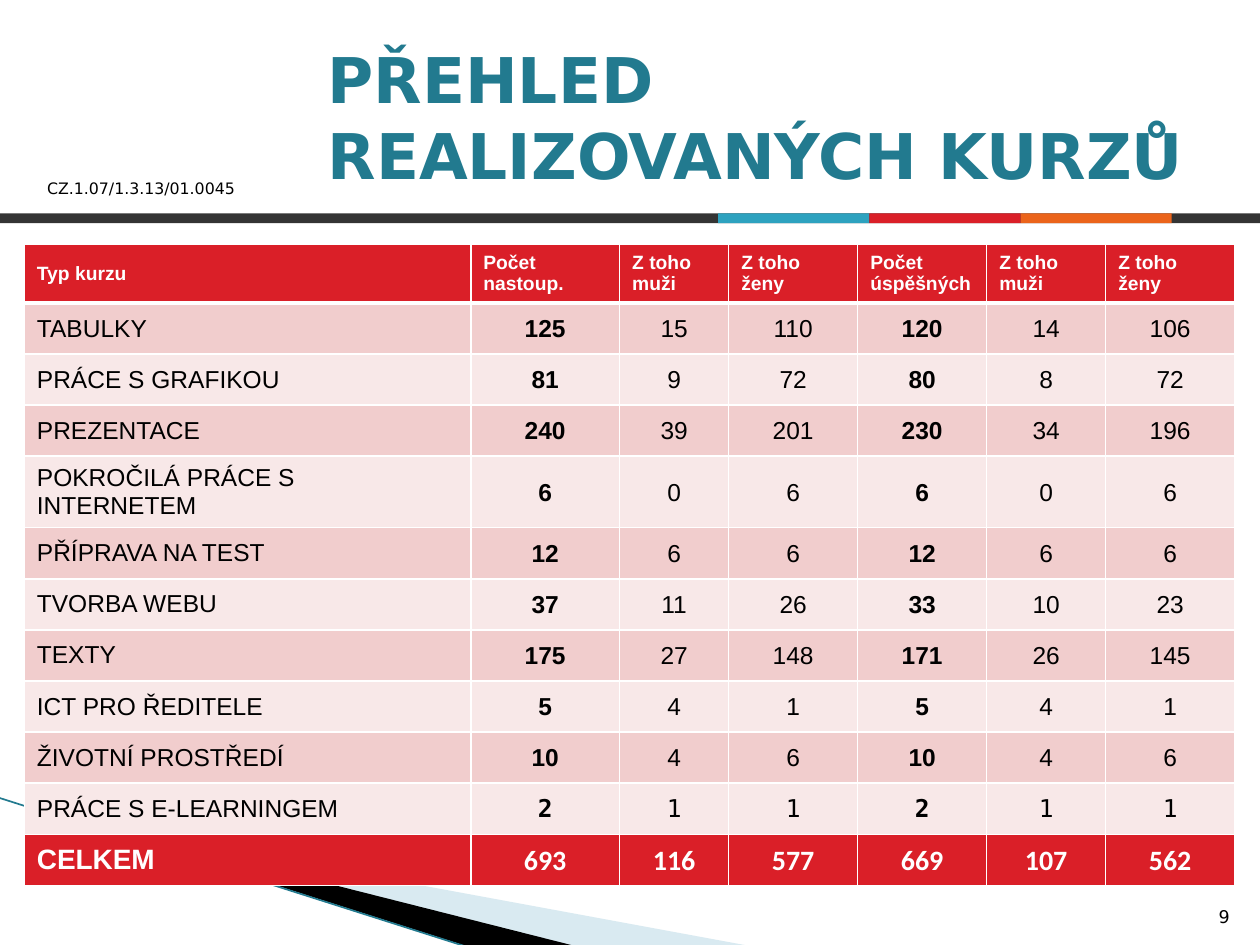
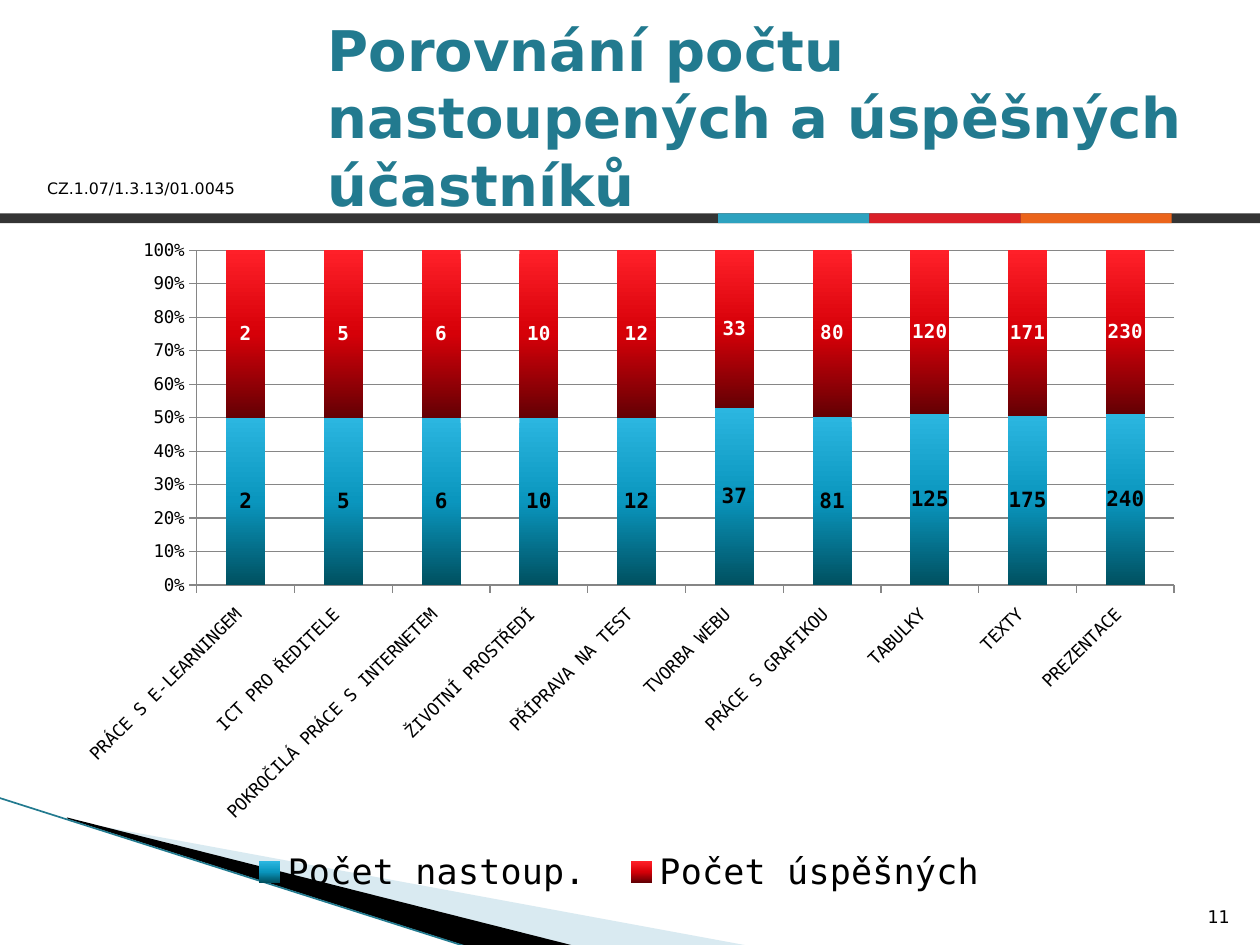
from lxml import etree
from pptx import Presentation
from pptx.chart.data import CategoryChartData
from pptx.dml.color import RGBColor
from pptx.enum.chart import XL_CHART_TYPE, XL_LABEL_POSITION, XL_LEGEND_POSITION, XL_TICK_MARK
from pptx.enum.shapes import MSO_CONNECTOR, MSO_SHAPE
from pptx.enum.text import MSO_ANCHOR, MSO_AUTO_SIZE, PP_ALIGN
from pptx.oxml.ns import qn
from pptx.util import Cm, Pt

LEFT, CENTER, RIGHT = PP_ALIGN.LEFT, PP_ALIGN.CENTER, PP_ALIGN.RIGHT
TOP, MIDDLE, BOTTOM = MSO_ANCHOR.TOP, MSO_ANCHOR.MIDDLE, MSO_ANCHOR.BOTTOM
TITLE_ONLY_LAYOUT = 5

COLORS = {
    "white": "FFFFFF", "black": "000000", "title": "227A8F", "band": "343434",
    "blue": "2DA2BF", "red": "DA1F28", "orange": "EB641B", "swoosh": "A0CBDC",
    "row_dark": "F1CDCD", "row_light": "F8E8E8", "grid": "868686",
}
GRADIENTS = {
    "started": ["2BB6E0", "0A96BE", "005060"],
    "passed": ["FF2029", "D60008", "640004"],
}
SANS, MONO, ARIAL, CALIBRI = "DejaVu Sans", "DejaVu Sans Mono", "Arial", "Calibri"

PROJECT_CODE = "CZ.1.07/1.3.13/01.0045"
STARTED, PASSED = "Počet nastoup.", "Počet úspěšných"
HEADERS = ["Typ kurzu", STARTED, "Z toho muži", "Z toho ženy",
           PASSED, "Z toho muži", "Z toho ženy"]
# Course: started, men, women, passed, men, women
COURSES = {
    "TABULKY": [125, 15, 110, 120, 14, 106],
    "PRÁCE S GRAFIKOU": [81, 9, 72, 80, 8, 72],
    "PREZENTACE": [240, 39, 201, 230, 34, 196],
    "POKROČILÁ PRÁCE S INTERNETEM": [6, 0, 6, 6, 0, 6],
    "PŘÍPRAVA NA TEST": [12, 6, 6, 12, 6, 6],
    "TVORBA WEBU": [37, 11, 26, 33, 10, 23],
    "TEXTY": [175, 27, 148, 171, 26, 145],
    "ICT PRO ŘEDITELE": [5, 4, 1, 5, 4, 1],
    "ŽIVOTNÍ PROSTŘEDÍ": [10, 4, 6, 10, 4, 6],
    "PRÁCE S E-LEARNINGEM": [2, 1, 1, 2, 1, 1],
}
COLUMN_WIDTHS = [9, 3, 2.2, 2.6, 2.6, 2.4, 2.6]
BOLD_COLUMNS = (1, 4)


def rgb(name):
    return RGBColor.from_string(COLORS[name])


def format_font(font, size, name=SANS, color="black", bold=False):
    font.size, font.name, font.bold = Pt(size), name, bold
    font.color.rgb = rgb(color)


def write_text(frame, text, align=LEFT, anchor=TOP, **font_format):
    frame.word_wrap = True
    frame.vertical_anchor = anchor
    paragraph = frame.paragraphs[0]
    paragraph.alignment = align
    run = paragraph.add_run()
    run.text = text
    format_font(run.font, **font_format)


def add_text_box(slide, box, text, **text_format):
    shape = slide.shapes.add_textbox(*map(Cm, box))
    write_text(shape.text_frame, text, **text_format)


def paint(shape, color):
    shape.shadow.inherit = False
    shape.fill.solid()
    shape.fill.fore_color.rgb = rgb(color)
    shape.line.fill.background()


def add_polygon(slide, points, color):
    points = [(Cm(x), Cm(y)) for x, y in points]
    builder = slide.shapes.build_freeform(*points[0])
    builder.add_line_segments(points[1:], close=True)
    shape = builder.convert_to_shape()
    paint(shape, color)
    return shape


def add_swoosh(slide, left, top):
    """Corner ornament: pale wedge, black wedge and a thin line."""
    pale = [(1.43, 0.46), (15.2, 3), (11.63, 3), (1.43, 0.43)]
    dark = [(1.38, 0.4), (11.66, 3), (9.52, 3.02), (1.4, 0.43)]
    for points, color in ((pale, "swoosh"), (dark, "black")):
        shape = add_polygon(slide, [(left + x, top + y) for x, y in points], color)
        if color == "swoosh":
            color_element = shape._element.spPr.find(".//" + qn("a:srgbClr"))
            etree.SubElement(color_element, qn("a:alpha"), val="40000")
    line = slide.shapes.add_connector(MSO_CONNECTOR.STRAIGHT, Cm(left), Cm(top),
                                      Cm(left + 9.48), Cm(top + 3.02))
    line.line.color.rgb = rgb("title")
    line.line.width = Pt(0.95)
    etree.SubElement(line._element.spPr, qn("a:effectLst"))


def add_band(slide, left, top, width, height):
    """Dark bar with three equal accents."""
    accent_width = width * 0.12
    accent_left = left + width * 0.57
    bars = [(left, width, "band")]
    bars += [(accent_left + index * accent_width, accent_width, color)
             for index, color in enumerate(("blue", "red", "orange"))]
    for bar_left, bar_width, color in bars:
        bar = slide.shapes.add_shape(MSO_SHAPE.RECTANGLE, Cm(bar_left), Cm(top),
                                     Cm(bar_width), Cm(height))
        paint(bar, color)


def add_base_slide(presentation, title, title_width, title_size, number):
    slide = presentation.slides.add_slide(presentation.slide_layouts[TITLE_ONLY_LAYOUT])
    add_swoosh(slide, -0.03, 16.08)
    add_band(slide, 0, 4.3, 25.4, 0.2)
    add_text_box(slide, (0.7, 3.48, 6.76, 0.64), PROJECT_CODE, size=9)
    shape = slide.shapes.title
    shape.left, shape.top, shape.width, shape.height = map(Cm, (6.35, 0.76, title_width, 3.18))
    shape.text_frame.auto_size = MSO_AUTO_SIZE.NONE
    write_text(shape.text_frame, title, anchor=MIDDLE,
               size=title_size, color="title", bold=True)
    add_text_box(slide, (23.62, 17.8, 1.42, 1.02), str(number),
                 align=RIGHT, anchor=BOTTOM, size=10)
    return slide


def set_borders(cell, bottom_width):
    properties = cell._tc.get_or_add_tcPr()
    for index, side in enumerate(("lnL", "lnR", "lnT", "lnB")):
        width = bottom_width if side == "lnB" else 1
        border = etree.Element(qn("a:" + side), w=str(Pt(width)))
        fill = etree.SubElement(border, qn("a:solidFill"))
        etree.SubElement(fill, qn("a:srgbClr"), val=COLORS["white"])
        properties.insert(index, border)


def fill_cell(cell, text, fill, tight=False, bottom_width=1, **text_format):
    cell.fill.solid()
    cell.fill.fore_color.rgb = rgb(fill)
    set_borders(cell, bottom_width)
    if tight:
        cell.margin_left = cell.margin_right = cell.margin_top = Cm(0.03)
        cell.margin_bottom = 0
    write_text(cell.text_frame, text, **text_format)
    cell.vertical_anchor = MIDDLE


def add_course_table(slide, left, top, row_height):
    row_count = len(COURSES) + 2
    frame = slide.shapes.add_table(row_count, len(HEADERS), Cm(left), Cm(top),
                                   Cm(sum(COLUMN_WIDTHS)), Cm(row_height * row_count))
    table = frame.table
    for column, width in zip(table.columns, COLUMN_WIDTHS):
        column.width = Cm(width)

    # Header row
    for column, header in enumerate(HEADERS):
        fill_cell(table.cell(0, column), header, "red", bottom_width=3,
                  size=11, name=ARIAL, color="white", bold=True)

    # Course rows
    last_row = len(COURSES)
    for row, (course, counts) in enumerate(COURSES.items(), start=1):
        fill = "row_dark" if row % 2 else "row_light"
        fill_cell(table.cell(row, 0), course, fill, size=14, name=ARIAL)
        for column, count in enumerate(counts, start=1):
            fill_cell(table.cell(row, column), str(count), fill, tight=row != last_row,
                      align=CENTER, size=14, name=MONO if row == last_row else ARIAL,
                      bold=column in BOLD_COLUMNS)

    # Totals row
    total_format = {"size": 16, "color": "white", "bold": True}
    fill_cell(table.cell(last_row + 1, 0), "CELKEM", "red", name=ARIAL, **total_format)
    for column, counts in enumerate(zip(*COURSES.values()), start=1):
        fill_cell(table.cell(last_row + 1, column), str(sum(counts)), "red", tight=True,
                  align=CENTER, name=CALIBRI, **total_format)


def set_gradient(series, stops):
    properties = series._element.get_or_add_spPr()
    gradient = etree.SubElement(properties, qn("a:gradFill"), rotWithShape="1")
    stop_list = etree.SubElement(gradient, qn("a:gsLst"))
    for index, color in enumerate(stops):
        position = index * 100000 // (len(stops) - 1)
        stop = etree.SubElement(stop_list, qn("a:gs"), pos=str(position))
        etree.SubElement(stop, qn("a:srgbClr"), val=color)
    etree.SubElement(gradient, qn("a:lin"), ang="5400000", scaled="0")


def set_plot_area(chart, **fractions):
    plot_area = chart._chartSpace.chart.plotArea
    for old_layout in plot_area.findall(qn("c:layout")):
        plot_area.remove(old_layout)
    layout = etree.Element(qn("c:layout"))
    plot_area.insert(0, layout)
    manual = etree.SubElement(layout, qn("c:manualLayout"))
    settings = {"layoutTarget": "inner", "xMode": "edge", "yMode": "edge", **fractions}
    for tag, value in settings.items():
        etree.SubElement(manual, qn("c:" + tag), val=str(value))


def add_comparison_chart(slide, left, top, width, height):
    # Chart names end in a space, which sets their distance from the axis and legend
    courses = sorted(COURSES, key=lambda course: COURSES[course][0])
    data = CategoryChartData()
    data.categories = [course + " " for course in courses]
    data.add_series(STARTED + " ", [COURSES[course][0] for course in courses])
    data.add_series(PASSED + " ", [COURSES[course][3] for course in courses])
    chart = slide.shapes.add_chart(XL_CHART_TYPE.COLUMN_STACKED_100, Cm(left), Cm(top),
                                   Cm(width), Cm(height), data).chart
    format_font(chart.font, 10, MONO)
    chart.has_title = False
    set_plot_area(chart, x=0.118, y=0.035, w=0.862, h=0.498)

    # Legend
    chart.has_legend = True
    chart.legend.position = XL_LEGEND_POSITION.BOTTOM
    chart.legend.include_in_layout = False
    format_font(chart.legend.font, 20, MONO)

    # Axes
    for axis in (chart.category_axis, chart.value_axis):
        axis.major_tick_mark = XL_TICK_MARK.OUTSIDE
        axis.format.line.color.rgb = rgb("grid")
        format_font(axis.tick_labels.font, 10, MONO)
    label_body = chart.category_axis._element.find(qn("c:txPr")).find(qn("a:bodyPr"))
    label_body.set("rot", "-2700000")
    label_body.set("vert", "horz")
    chart.value_axis.major_gridlines.format.line.color.rgb = rgb("grid")
    chart.value_axis.tick_labels.number_format = "0%"
    chart.value_axis.tick_labels.number_format_is_linked = False

    # Columns
    plot = chart.plots[0]
    plot.vary_by_categories = False
    plot.gap_width, plot.overlap = 150, 100
    styles = (("started", 12, "black"), ("passed", 11, "white"))
    for series, (gradient, size, color) in zip(plot.series, styles):
        set_gradient(series, GRADIENTS[gradient])
        labels = series.data_labels
        labels.show_value = True
        labels.position = XL_LABEL_POSITION.CENTER
        format_font(labels.font, size, MONO, color, bold=True)


def main():
    presentation = Presentation()
    presentation.slide_width, presentation.slide_height = Cm(25.4), Cm(19.05)

    overview = add_base_slide(presentation, "PŘEHLED REALIZOVANÝCH KURZŮ", 18.54, 36, 9)
    add_course_table(overview, 0.49, 4.92, 1.03)

    comparison = add_base_slide(
        presentation, "Porovnání počtu nastoupených a úspěšných účastníků", 18.34, 32, 11)
    add_comparison_chart(comparison, 1.27, 4.57, 22.86, 13.56)

    presentation.save("out.pptx")


if __name__ == "__main__":
    main()
